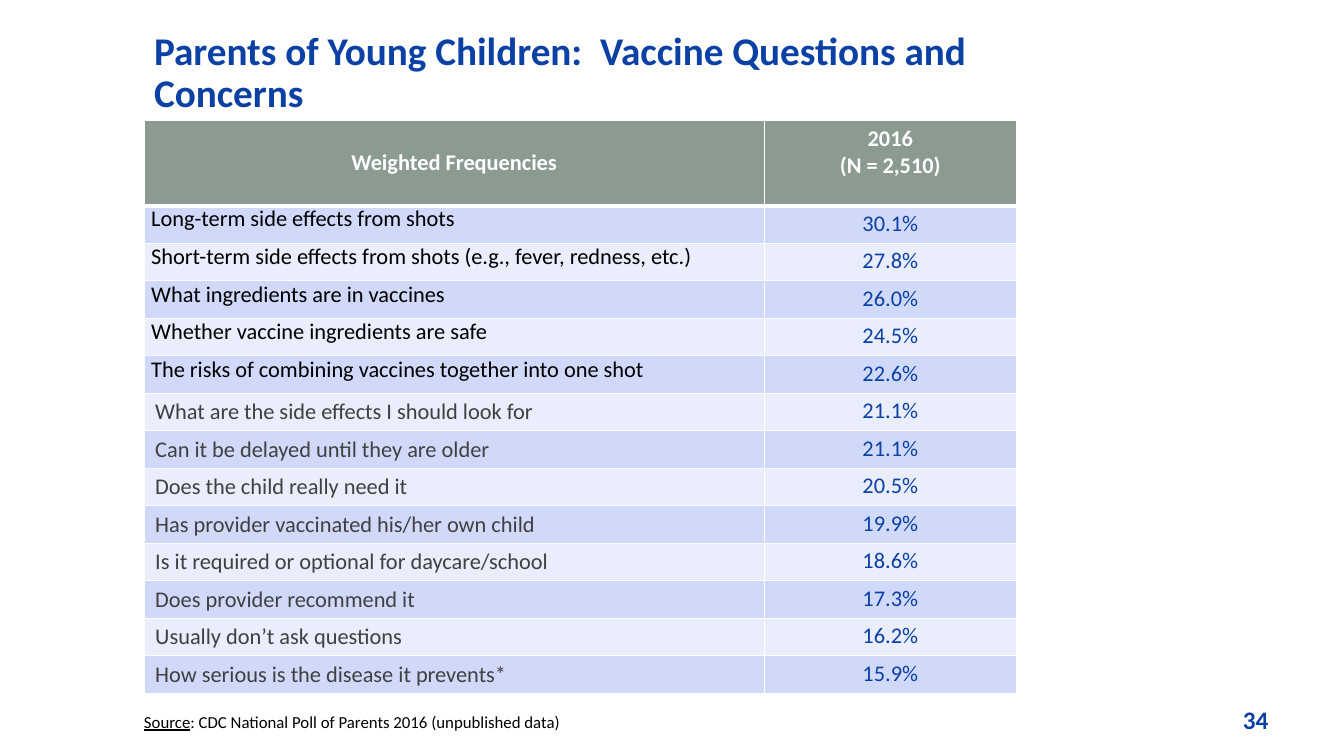
import pptx
import pptx.util
import pptx.dml.color
import pptx.enum.text
import pptx.oxml.ns
from lxml import etree

Inches, Pt = pptx.util.Inches, pptx.util.Pt
ALIGN, ANCHOR = pptx.enum.text.PP_ALIGN, pptx.enum.text.MSO_ANCHOR

COLORS = {
    "blue": "0B40A5", "header": "8B9B92", "white": "FFFFFF", "black": "000000",
    "gray": "404040", "dark_band": "D0D9FA", "light_band": "E9EDFC",
}

# Font formats
TITLE = {"size": Pt(28), "bold": True, "color": "blue"}
HEADING = {"size": Pt(16), "bold": True, "color": "white"}
MAIN_CONCERN = {"size": Pt(16), "bold": False, "color": "black"}
OTHER_CONCERN = {**MAIN_CONCERN, "color": "gray"}
SHARE = {**MAIN_CONCERN, "color": "blue"}
SOURCE = {"size": Pt(12), "color": "black"}
PAGE_NUMBER = {"size": Pt(18), "bold": True, "color": "blue"}

# Cell margins: left and right, top and bottom
WIDE, TIGHT = (0.11, 0.05), (0.07, 0)

MAIN_COUNT = 5
CONCERNS = [
    ("Long-term side effects from shots", "30.1%"),
    ("Short-term side effects from shots (e.g., fever, redness, etc.)", "27.8%"),
    ("What ingredients are in vaccines", "26.0%"),
    ("Whether vaccine ingredients are safe", "24.5%"),
    ("The risks of combining vaccines together into one shot", "22.6%"),
    ("What are the side effects I should look for", "21.1%"),
    ("Can it be delayed until they are older", "21.1%"),
    ("Does the child really need it", "20.5%"),
    ("Has provider vaccinated his/her own child", "19.9%"),
    ("Is it required or optional for daycare/school", "18.6%"),
    ("Does provider recommend it", "17.3%"),
    ("Usually don’t ask questions", "16.2%"),
    ("How serious is the disease it prevents*", "15.9%"),
]


def rgb(name):
    return pptx.dml.color.RGBColor.from_string(COLORS[name])


def write(paragraph, text, style):
    run = paragraph.add_run()
    run.text = text
    run.font.name = "Calibri"
    for attribute, value in style.items():
        if attribute == "color":
            run.font.color.rgb = rgb(value)
        else:
            setattr(run.font, attribute, value)


def add_text_frame(slide, box, anchor):
    frame = slide.shapes.add_textbox(*map(Inches, box)).text_frame
    frame.word_wrap = True
    frame.vertical_anchor = anchor
    return frame


def add_title(slide, box):
    title = add_text_frame(slide, box, ANCHOR.BOTTOM).paragraphs[0]
    title.line_spacing = Pt(30)
    write(title, "Parents of Young Children:  Vaccine Questions and Concerns", TITLE)


def set_borders(cell, bottom_width):
    properties = cell._tc.get_or_add_tcPr()
    widths = {"lnL": 1, "lnR": 1, "lnT": 1, "lnB": bottom_width}
    for side, width in widths.items():
        line = etree.SubElement(properties, pptx.oxml.ns.qn(f"a:{side}"), w=str(Pt(width)))
        fill = etree.SubElement(line, pptx.oxml.ns.qn("a:solidFill"))
        etree.SubElement(fill, pptx.oxml.ns.qn("a:srgbClr"), val=COLORS["white"])


def fill_cell(cell, lines, style, fill, margins=TIGHT, align=ALIGN.LEFT,
              spacing=None, anchor=ANCHOR.TOP, bottom_width=1):
    set_borders(cell, bottom_width)
    cell.fill.solid()
    cell.fill.fore_color.rgb = rgb(fill)
    cell.margin_left = cell.margin_right = Inches(margins[0])
    cell.margin_top = cell.margin_bottom = Inches(margins[1])
    cell.vertical_anchor = anchor
    for index, line in enumerate(lines):
        paragraph = cell.text_frame.add_paragraph() if index else cell.text_frame.paragraphs[0]
        paragraph.alignment = align
        if spacing:
            paragraph.line_spacing = spacing
        write(paragraph, line, style)


def add_concerns_table(slide, box):
    left, top, width, height = box
    share_width, header_height = 2.5, 0.85
    table = slide.shapes.add_table(len(CONCERNS) + 1, 2, *map(Inches, box)).table
    table.columns[0].width = Inches(width - share_width)
    table.columns[1].width = Inches(share_width)
    for row in table.rows:
        row.height = Inches((height - header_height) / len(CONCERNS))
    table.rows[0].height = Inches(header_height)

    # Header row
    headings = [(["Weighted Frequencies"], ANCHOR.MIDDLE),
                (["2016", "(N = 2,510)"], ANCHOR.TOP)]
    for column, (lines, anchor) in enumerate(headings):
        fill_cell(table.cell(0, column), lines, HEADING, "header", WIDE,
                  ALIGN.CENTER, anchor=anchor, bottom_width=3)

    # Concerns and their shares
    for index, (concern, share) in enumerate(CONCERNS):
        band = "light_band" if index % 2 else "dark_band"
        style, margins = (MAIN_CONCERN, TIGHT) if index < MAIN_COUNT else (OTHER_CONCERN, WIDE)
        fill_cell(table.cell(index + 1, 0), [concern], style, band, margins)
        fill_cell(table.cell(index + 1, 1), [share], SHARE, band,
                  align=ALIGN.CENTER, spacing=1.15)


def add_source(slide, box):
    source = add_text_frame(slide, box, ANCHOR.BOTTOM).paragraphs[0]
    indent = Inches(0.27)
    properties = source._p.get_or_add_pPr()
    properties.set("marL", str(indent))
    properties.set("indent", str(-indent))
    write(source, "Source", {**SOURCE, "underline": True})
    write(source, ": CDC National Poll of Parents 2016 (unpublished data)", SOURCE)


def add_page_number(slide, box):
    frame = add_text_frame(slide, box, ANCHOR.TOP)
    write(frame.paragraphs[0], "34", PAGE_NUMBER)


def main():
    deck = pptx.Presentation()
    deck.slide_width, deck.slide_height = Inches(13.33), Inches(7.5)
    slide = deck.slides.add_slide(deck.slide_layouts[6])
    add_title(slide, (1.43, -0.06, 9, 1.25))
    add_concerns_table(slide, (1.43, 1.19, 8.65, 5.69))
    add_source(slide, (1.33, 6.64, 10.8, 0.67))
    add_page_number(slide, (12.23, 6.94, 1.1, 0.4))
    deck.save("out.pptx")


if __name__ == "__main__":
    main()
